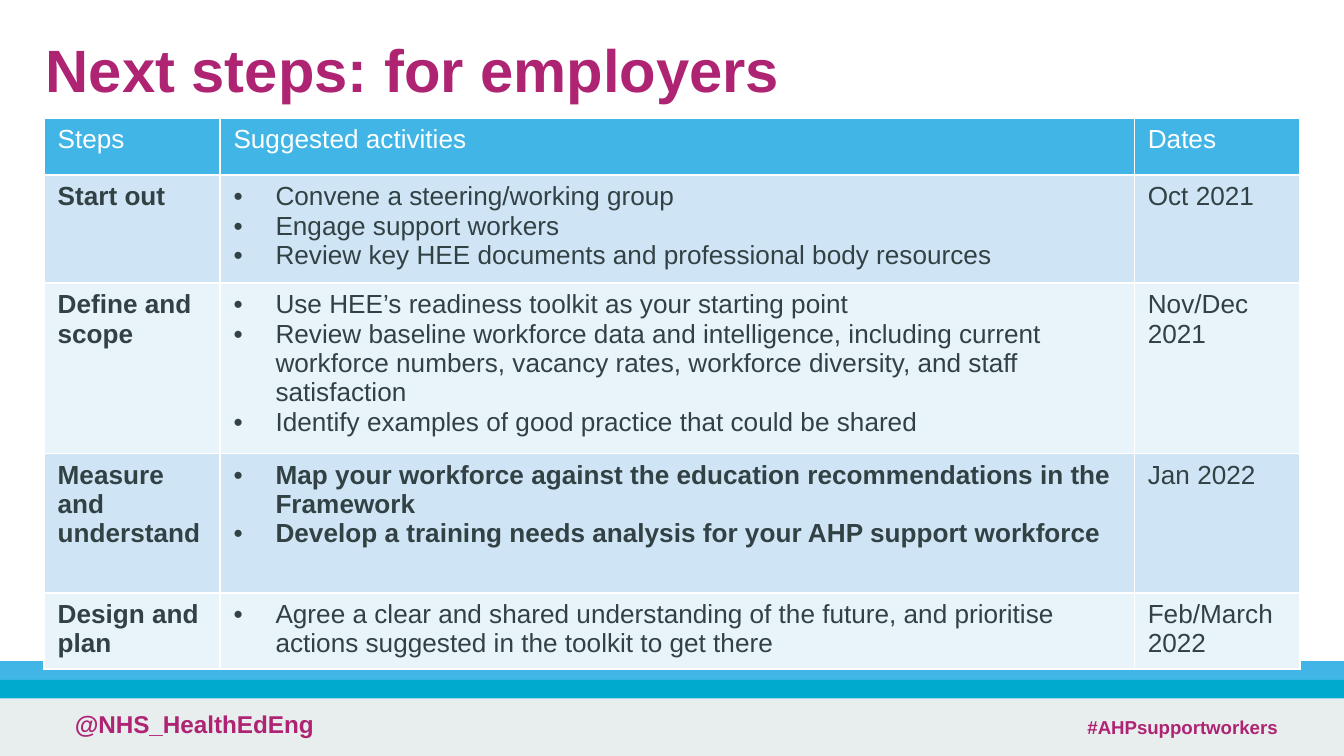
from lxml import etree
from pptx import Presentation
from pptx.dml.color import RGBColor
from pptx.enum.shapes import MSO_SHAPE
from pptx.enum.text import MSO_ANCHOR, PP_ALIGN
from pptx.oxml.ns import qn
from pptx.util import Pt

RECTANGLE = MSO_SHAPE.RECTANGLE
MIDDLE, TOP = MSO_ANCHOR.MIDDLE, MSO_ANCHOR.TOP
LEFT = PP_ALIGN.LEFT
TITLE_ONLY = 5

THEME = {
    "font": "Arial",
    "colours": {"accent": "AE2473", "sky": "41B6E6", "teal": "00A9CE", "footer": "E8EDEE",
                "ink": "324144", "white": "FFFFFF", "odd": "CFE5F5", "even": "E9F3FA"},
    "sizes": {"title": 32, "table": 14, "handle": 13, "hashtag": 10},
}

TITLE = "Next steps: for employers"
TITLE_BOX = (17.3, 0, 620.6, 78.5)
BANDS = [
    ("footer", (0, 374.2, 720, 30.8)),
    ("sky", (0, 354.2, 720, 10)),
    ("teal", (0, 364.2, 720, 10)),
]
LABELS = [
    ("@NHS_HealthEdEng", "handle", (33, 376.6, 420.5, 28.4)),
    ("#AHPsupportworkers", "hashtag", (575.5, 380.2, 138, 19.4)),
]

HEADINGS = ["Steps", "Suggested activities", "Dates"]
STEPS = [
    ("Start out", ["Convene a steering/working group",
                   "Engage support workers",
                   "Review key HEE documents and professional body resources"], "Oct 2021", False),
    ("Define and scope", ["Use HEE’s readiness toolkit as your starting point",
                          "Review baseline workforce data and intelligence, including current "
                          "workforce numbers, vacancy rates, workforce diversity, and staff satisfaction",
                          "Identify examples of good practice that could be shared"], "Nov/Dec 2021", False),
    ("Measure and understand", ["Map your workforce against the education recommendations in the Framework",
                                "Develop a training needs analysis for your AHP support workforce"],
     "Jan 2022", True),
    ("Design and plan", ["Agree a clear and shared understanding of the future, and prioritise "
                         "actions suggested in the toolkit to get there"], "Feb/March 2022", False),
]
TABLE_LEFT, TABLE_TOP = 23.7, 63.4
COLUMN_WIDTHS = [94.2, 489.8, 88.8]
ROW_HEIGHTS = [30.5, 57.9, 91, 74.5, 40.8]
BULLET_INDENT = 22.5


def colour(name):
    return RGBColor.from_string(THEME["colours"][name])


def points(values):
    return [Pt(value) for value in values]


def paint(target, name):
    target.fill.solid()
    target.fill.fore_color.rgb = colour(name)


def add_bullet(para):
    properties = para._p.get_or_add_pPr()
    properties.set("marL", str(Pt(BULLET_INDENT)))
    properties.set("indent", str(-Pt(BULLET_INDENT)))
    etree.SubElement(properties, qn("a:buFont")).set("typeface", THEME["font"])
    etree.SubElement(properties, qn("a:buChar")).set("char", "•")


def write(frame, lines, size, ink, bold=False, bullets=False):
    frame.word_wrap = True
    for index, line in enumerate(lines):
        para = frame.paragraphs[0] if index == 0 else frame.add_paragraph()
        para.alignment = LEFT
        if bullets:
            add_bullet(para)
        span = para.add_run()
        span.text = line
        style = {"name": THEME["font"], "size": Pt(THEME["sizes"][size]), "bold": bold}
        for key, value in style.items():
            setattr(span.font, key, value)
        span.font.color.rgb = colour(ink)


def add_title(page):
    title = page.shapes.title
    title.left, title.top, title.width, title.height = points(TITLE_BOX)
    write(title.text_frame, [TITLE], "title", "accent", bold=True)
    title.text_frame.vertical_anchor = MIDDLE
    title.text_frame.paragraphs[0].line_spacing = 0.9


def add_footer(page):
    for fill, place in BANDS:
        band = page.shapes.add_shape(RECTANGLE, *points(place))
        band.shadow.inherit = False
        paint(band, fill)
        band.line.fill.background()
    for text, size, place in LABELS:
        box = page.shapes.add_textbox(*points(place))
        write(box.text_frame, [text], size, "accent", bold=True)


def add_steps_table(page):
    place = points([TABLE_LEFT, TABLE_TOP, sum(COLUMN_WIDTHS), sum(ROW_HEIGHTS)])
    table = page.shapes.add_table(len(ROW_HEIGHTS), len(COLUMN_WIDTHS), *place).table
    for column, width in zip(table.columns, COLUMN_WIDTHS):
        column.width = Pt(width)
    for row, height in zip(table.rows, ROW_HEIGHTS):
        row.height = Pt(height)

    for cell, heading in zip(table.rows[0].cells, HEADINGS):
        paint(cell, "sky")
        cell.vertical_anchor = TOP
        write(cell.text_frame, [heading], "table", "white")

    for number, (step, activities, date, emphasis) in enumerate(STEPS, 1):
        contents = [([step], True, False), (activities, emphasis, True), ([date], False, False)]
        for cell, (lines, bold, bullets) in zip(table.rows[number].cells, contents):
            paint(cell, "odd" if number % 2 else "even")
            cell.vertical_anchor = TOP
            write(cell.text_frame, lines, "table", "ink", bold, bullets)


def main():
    deck = Presentation()
    deck.slide_width, deck.slide_height = Pt(720), Pt(405)
    page = deck.slides.add_slide(deck.slide_layouts[TITLE_ONLY])
    add_title(page)
    add_footer(page)
    add_steps_table(page)
    deck.save("out.pptx")


if __name__ == "__main__":
    main()
